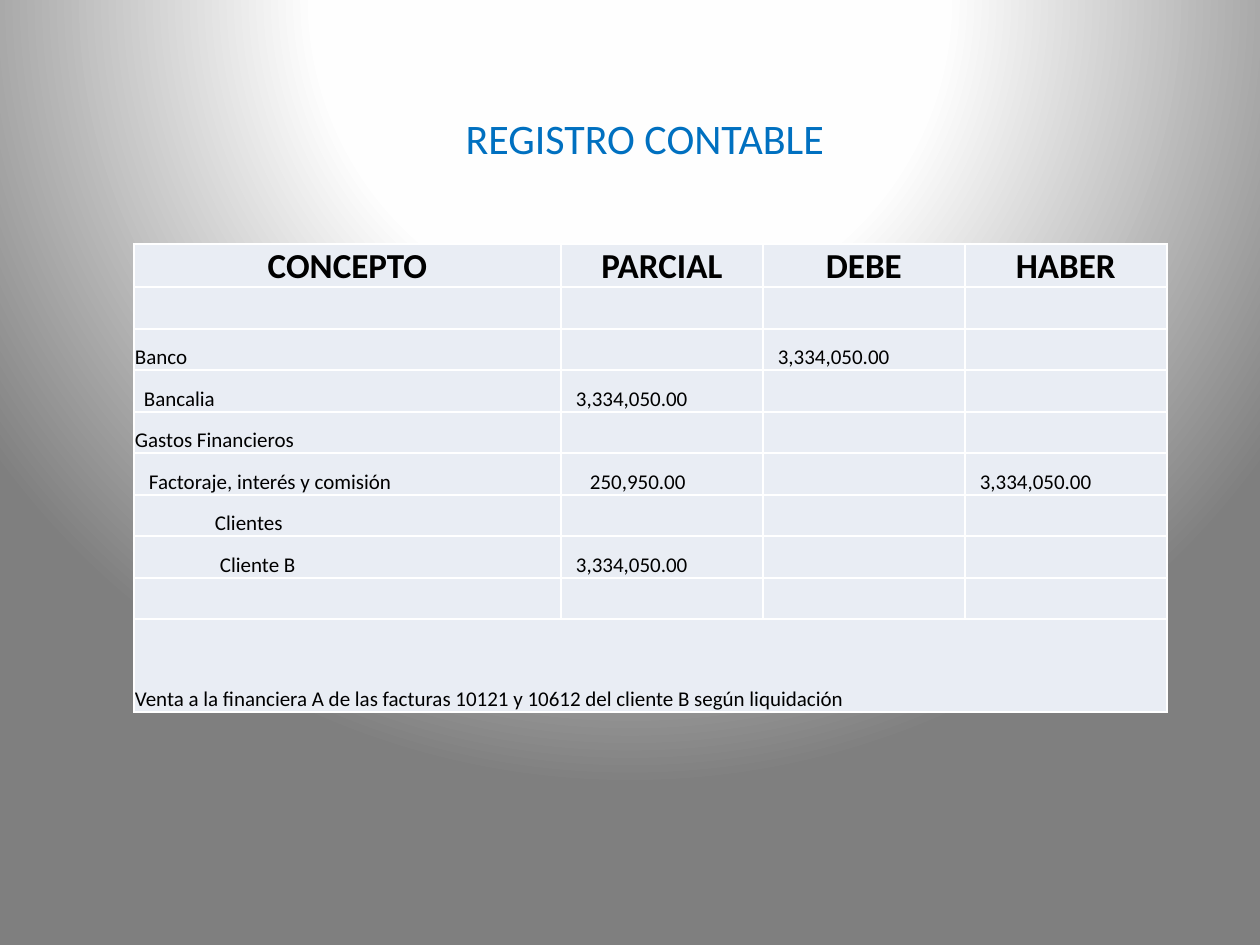
"""Build the "Registro contable" slide: a ledger table under a title."""
from pptx import Presentation
from pptx.dml.color import RGBColor
from pptx.enum.text import MSO_ANCHOR, MSO_AUTO_SIZE, PP_ALIGN
from pptx.oxml import parse_xml
from pptx.oxml.ns import nsdecls
from pptx.util import Pt

PX = 914400 // 126
FONT = "Calibri"
COLORS = {"title": "0070C0", "text": "000000", "cell": "E9EDF4", "border": "FFFFFF"}
BACKDROP = [(0, "FFFFFF"), (40, "FEFEFE"), (100, "7F7F7F")]

TITLE = "REGISTRO CONTABLE"
HEADINGS = ["CONCEPTO", "PARCIAL", "DEBE", "HABER"]
ENTRIES = [
    ("", "", "", ""),
    ("Banco", "", "3,334,050.00", ""),
    ("Bancalia", "3,334,050.00", "", ""),
    ("Gastos Financieros", "", "", ""),
    ("Factoraje, interés y comisión", "250,950.00", "", "3,334,050.00"),
    ("Clientes", "", "", ""),
    ("Cliente B", "3,334,050.00", "", ""),
    ("", "", "", ""),
]
NOTE = "Venta a la financiera A de las facturas 10121 y 10612 del cliente B según liquidación"
INDENTS = {
    "Bancalia": 9,
    "Factoraje, interés y comisión": 14,
    "Clientes": 80,
    "Cliente B": 85,
    "3,334,050.00": 14,
    "250,950.00": 28,
}
COLUMN_WIDTHS = [427, 202, 202, 202]
ROW_HEIGHTS = [42] + [42, 41] * 4 + [93]


def set_background(slide):
    stops = "".join(
        f'<a:gs pos="{pos * 1000}"><a:srgbClr val="{color}"/></a:gs>' for pos, color in BACKDROP
    )
    slide.element.cSld.insert(0, parse_xml(
        f'<p:bg {nsdecls("p", "a")}><p:bgPr><a:gradFill rotWithShape="1">'
        f'<a:gsLst>{stops}</a:gsLst><a:path path="circle">'
        '<a:fillToRect l="50000" t="-80000" r="50000" b="180000"/></a:path>'
        '</a:gradFill><a:effectLst/></p:bgPr></p:bg>'
    ))


def style_font(paragraph, size, color, bold=False):
    font = paragraph.font
    font.name, font.size, font.bold = FONT, Pt(size), bold
    font.color.rgb = RGBColor.from_string(COLORS[color])


def add_title(slide):
    title = slide.shapes.title
    title.left, title.top, title.width, title.height = (n * PX for n in (203, 106, 893, 63))
    frame = title.text_frame
    frame.text = TITLE
    frame.auto_size = MSO_AUTO_SIZE.SHAPE_TO_FIT_TEXT
    frame.margin_right = 22 * PX
    frame.paragraphs[0].alignment = PP_ALIGN.CENTER
    style_font(frame.paragraphs[0], 24, "title")


def fill_cell(cell, text, is_heading):
    cell.text = text
    cell.vertical_anchor = MSO_ANCHOR.BOTTOM
    cell.margin_left = cell.margin_right = cell.margin_top = PX
    cell.margin_bottom = 0
    paragraph = cell.text_frame.paragraphs[0]
    style_font(paragraph, 20 if is_heading else 12, "text", is_heading)
    paragraph.alignment = PP_ALIGN.CENTER if is_heading else PP_ALIGN.LEFT
    if text in INDENTS:
        paragraph._p.get_or_add_pPr().set("marL", str(INDENTS[text] * PX))
    cell.fill.solid()
    cell.fill.fore_color.rgb = RGBColor.from_string(COLORS["cell"])
    properties = cell._tc.get_or_add_tcPr()
    for position, side in enumerate(("lnL", "lnR", "lnT", "lnB")):
        properties.insert(position, parse_xml(
            f'<a:{side} {nsdecls("a")} w="12700"><a:solidFill>'
            f'<a:srgbClr val="{COLORS["border"]}"/></a:solidFill></a:{side}>'
        ))


def add_ledger(slide):
    rows = [HEADINGS, *ENTRIES, (NOTE, "", "", "")]
    ledger = slide.shapes.add_table(
        len(rows), len(HEADINGS), 134 * PX, 244 * PX,
        sum(COLUMN_WIDTHS) * PX, sum(ROW_HEIGHTS) * PX,
    ).table
    ledger.first_row = ledger.horz_banding = False
    for column, width in zip(ledger.columns, COLUMN_WIDTHS):
        column.width = width * PX
    for r, (texts, height) in enumerate(zip(rows, ROW_HEIGHTS)):
        ledger.rows[r].height = height * PX
        for c, text in enumerate(texts):
            fill_cell(ledger.cell(r, c), text, r == 0)
    last = len(rows) - 1
    ledger.cell(last, 0).merge(ledger.cell(last, len(HEADINGS) - 1))


def main():
    deck = Presentation()
    deck.slide_width, deck.slide_height = 1260 * PX, 945 * PX
    slide = deck.slides.add_slide(deck.slide_layouts[5])
    set_background(slide)
    add_title(slide)
    add_ledger(slide)
    deck.save("out.pptx")


if __name__ == "__main__":
    main()
